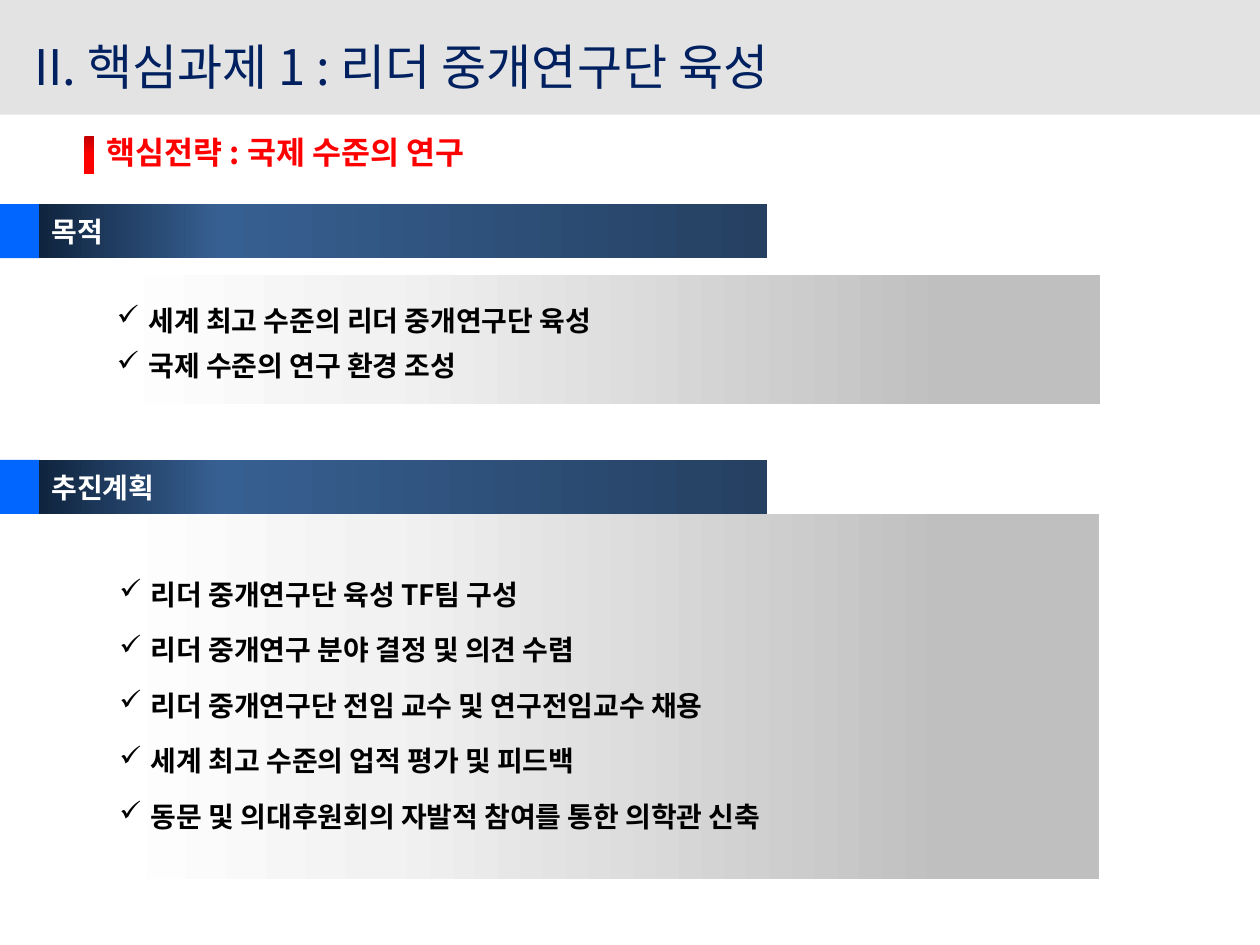
from lxml import etree
from pptx import Presentation
from pptx.dml.color import RGBColor
from pptx.enum.shapes import MSO_SHAPE as Shape
from pptx.enum.text import MSO_ANCHOR as Anchor, PP_ALIGN as Align
from pptx.oxml.ns import qn
from pptx.util import Inches, Pt

FONT = "Noto Sans CJK KR"
NAVY = RGBColor(0x00, 0x20, 0x60)
BLUE = RGBColor(0x00, 0x66, 0xFF)
RED = RGBColor(0xFF, 0x00, 0x00)
DARK_RED = RGBColor(0xC0, 0x00, 0x00)
BLACK = RGBColor(0x00, 0x00, 0x00)
WHITE = RGBColor(0xFF, 0xFF, 0xFF)
BAND_GRAY = RGBColor(0xE3, 0xE3, 0xE3)
PANEL_STOPS = [(0, WHITE), (28, RGBColor(0xF2, 0xF2, 0xF2)),
               (85, RGBColor(0xBF, 0xBF, 0xBF))]
HEADING_STOPS = [(0, RGBColor(0x0F, 0x24, 0x3E)),
                 (25, RGBColor(0x37, 0x60, 0x92)),
                 (100, RGBColor(0x25, 0x40, 0x61))]
MARKER_STOPS = [(0, DARK_RED), (50, RED), (100, RED)]

SECTIONS = [
    ("목적", 1.62, (0.83, 2.18, 7.9, 1.03), 1.2,
     ["세계 최고 수준의 리더 중개연구단 육성",
      "국제 수준의 연구 환경 조성"]),
    ("추진계획", 3.65, (0.85, 4.08, 7.87, 2.9), 1.5,
     ["리더 중개연구단 육성 TF팀 구성",
      "리더 중개연구 분야 결정 및 의견 수렴",
      "리더 중개연구단 전임 교수 및 연구전임교수 채용",
      "세계 최고 수준의 업적 평가 및 피드백",
      "동문 및 의대후원회의 자발적 참여를 통한 의학관 신축"]),
]


def set_attrs(obj, values):
    """Set each named attribute of an object."""
    for name, value in values.items():
        setattr(obj, name, value)


def add_rect(s, box, color=None):
    """Add a plain rectangle, filled when a colour is given."""
    sp = s.shapes.add_shape(Shape.RECTANGLE, *map(Inches, box))
    sp.shadow.inherit = False
    sp.line.fill.background()
    if color is not None:
        sp.fill.solid()
        sp.fill.fore_color.rgb = color
    return sp


def add_gradient_rect(s, box, stops, angle=0):
    """Add a rectangle with a linear gradient of percent and colour stops."""
    sp = add_rect(s, box)
    sp.fill.gradient()
    grad = sp._element.spPr.find(qn("a:gradFill"))
    for child in list(grad):
        grad.remove(child)
    gs_list = etree.SubElement(grad, qn("a:gsLst"))
    for percent, color in stops:
        gs = etree.SubElement(gs_list, qn("a:gs"), pos=str(percent * 1000))
        etree.SubElement(gs, qn("a:srgbClr"), val=str(color))
    etree.SubElement(grad, qn("a:lin"), ang=str(angle * 60000), scaled="0")
    return sp


def write(p, text, size, color, bold=True):
    """Write one left-aligned run in the slide font."""
    p.alignment = Align.LEFT
    r = p.add_run()
    r.text = text
    set_attrs(r.font, {"name": FONT, "size": Pt(size), "bold": bold})
    r.font.color.rgb = color
    etree.SubElement(r._r.get_or_add_rPr(), qn("a:ea"), typeface=FONT)


def add_title(s, box):
    """Place the title over a gray band across the top."""
    band = add_rect(s, (0, 0, 10, 0.91), BAND_GRAY)
    s.shapes._spTree.insert(2, band._element)
    title = s.shapes.title
    set_attrs(title, dict(zip(("left", "top", "width", "height"),
                              map(Inches, box))))
    tf = title.text_frame
    set_attrs(tf, {"vertical_anchor": Anchor.MIDDLE, "word_wrap": True})
    write(tf.paragraphs[0], "II. 핵심과제 1 : 리더 중개연구단 육성", 28, NAVY, False)


def add_strategy(s, box):
    """Place the red strategy line and the marker on its left."""
    left, top, width, height = box
    tf = s.shapes.add_textbox(*map(Inches, box)).text_frame
    tf.word_wrap = True
    write(tf.paragraphs[0], "핵심전략 : 국제 수준의 연구", 18, RED)
    add_gradient_rect(s, (left - 0.08, top + 0.07, 0.08, 0.3), MARKER_STOPS, 90)


def add_heading(s, box, text):
    """Place a section heading bar with a blue tab at its left end."""
    left, top, width, height = box
    tab = 0.31
    bar = add_gradient_rect(s, (left + tab, top, width - tab, height), HEADING_STOPS)
    tf = bar.text_frame
    tf.vertical_anchor = Anchor.MIDDLE
    write(tf.paragraphs[0], text, 16, WHITE)
    add_rect(s, (left, top, tab, height), BLUE)


def add_panel(s, box, items, spacing):
    """Place a gray gradient panel with a checked list."""
    tf = add_gradient_rect(s, box, PANEL_STOPS).text_frame
    set_attrs(tf, {"vertical_anchor": Anchor.MIDDLE, "word_wrap": True})
    indent = Inches(0.25)
    for i, item in enumerate(items):
        p = tf.paragraphs[0] if i == 0 else tf.add_paragraph()
        set_attrs(p, {"line_spacing": spacing, "space_after": Pt(3)})
        pPr = p._p.get_or_add_pPr()
        pPr.set("marL", str(indent))
        pPr.set("indent", str(-indent))
        etree.SubElement(pPr, qn("a:buChar"), char="✓")
        write(p, item, 16, BLACK)


def main():
    """Build and save the slide."""
    prs = Presentation()
    set_attrs(prs, {"slide_width": Inches(10), "slide_height": Inches(7.5)})
    s = prs.slides.add_slide(prs.slide_layouts[5])
    add_title(s, (0.17, 0.23, 9.66, 0.59))
    add_strategy(s, (0.75, 1.01, 7.09, 0.4))
    for heading, top, panel_box, spacing, items in SECTIONS:
        add_panel(s, panel_box, items, spacing)
        add_heading(s, (0, top, 6.09, 0.43), heading)
    prs.save("out.pptx")


if __name__ == "__main__":
    main()
